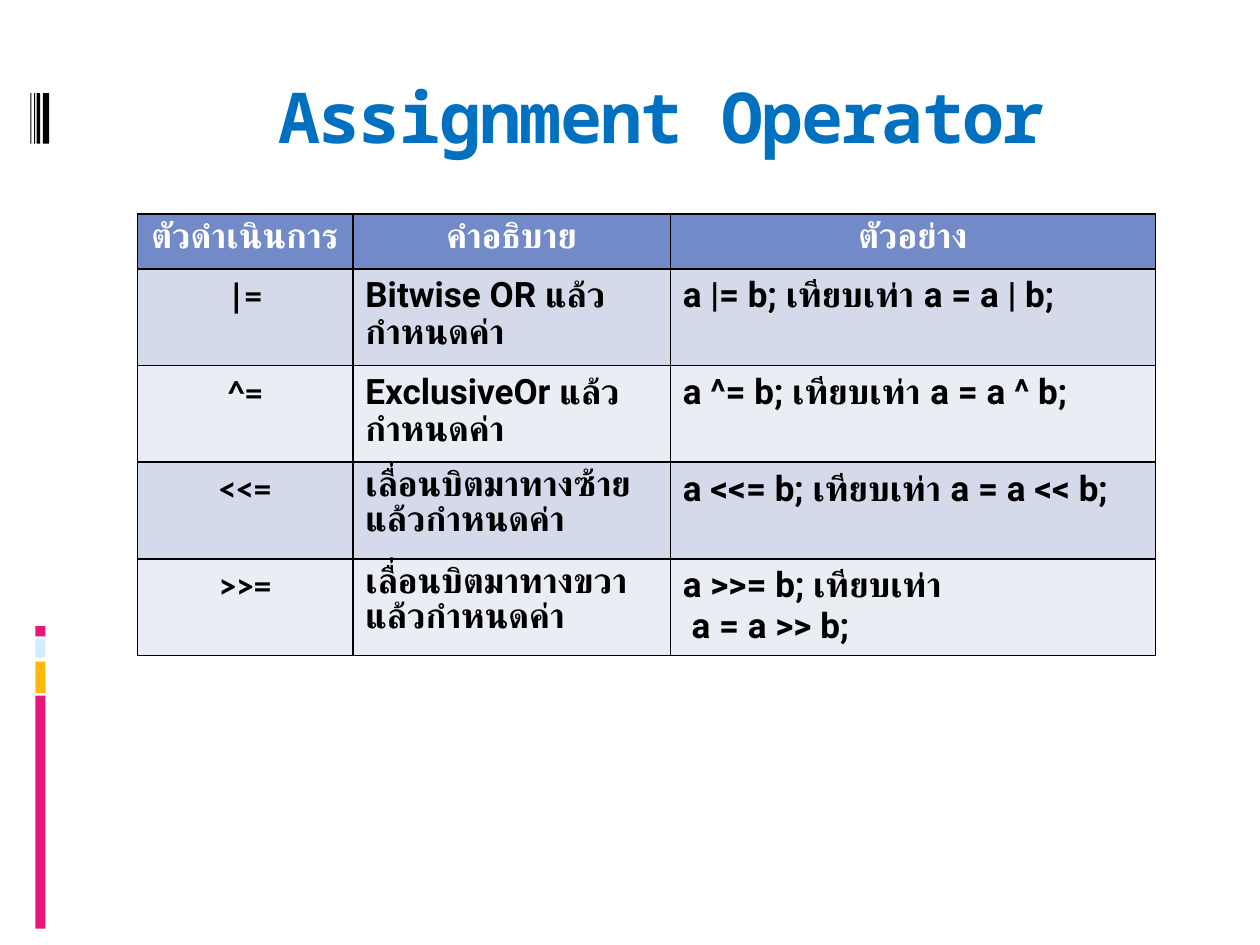
from dataclasses import dataclass

import lxml.etree
import pptx
import pptx.dml.color
import pptx.enum.shapes
import pptx.enum.text
import pptx.oxml.ns
import pptx.util

Inches = pptx.util.Inches
Pt = pptx.util.Pt
qn = pptx.oxml.ns.qn
CENTER = pptx.enum.text.PP_ALIGN.CENTER
LEFT = pptx.enum.text.PP_ALIGN.LEFT


@dataclass
class Stripe:
    left: float
    top: float
    width: float
    height: float
    color: str


@dataclass
class Operator:
    symbol: str
    meaning: str
    example: str
    height: float


STRIPES = [
    Stripe(0.28, 5.52, 0.08, 1.85, "EA157A"),
    Stripe(0.28, 5.25, 0.08, 0.25, "FEB80A"),
    Stripe(0.28, 5.07, 0.08, 0.15, "D6ECFF"),
    Stripe(0.28, 4.97, 0.08, 0.08, "EA157A"),
] + [
    Stripe(left, 0.74, width, 0.4, "000000")
    for left, width in [(0.34, 0.05), (0.29, 0.03), (0.27, 0.01), (0.24, 0.01)]
]

HEADINGS = Operator("ตัวดำเนินการ", "คำอธิบาย", "ตัวอย่าง", 0.41)
OPERATORS = [
    Operator("|=", "Bitwise OR แล้วกำหนดค่า", "a |= b; เทียบเท่า a = a | b;", 0.75),
    Operator("^=", "ExclusiveOr แล้วกำหนดค่า", "a ^= b; เทียบเท่า a = a ^ b;", 0.71),
    Operator("<<=", "เลื่อนบิตมาทางซ้ายแล้วกำหนดค่า", "a <<= b; เทียบเท่า a = a << b;", 0.66),
    Operator(">>=", "เลื่อนบิตมาทางขวาแล้วกำหนดค่า", "a >>= b; เทียบเท่า\n a = a >> b;", 0.75),
]
COLUMN_WIDTHS = [1.71, 2.52, 3.85]
BAND_FILLS = ["D5DAEB", "EBEDF5"]


def rgb(color: str) -> pptx.dml.color.RGBColor:
    return pptx.dml.color.RGBColor.from_string(color)


def style(paragraph, size: float, face: str, color: str, align) -> None:
    paragraph.alignment = align
    paragraph.font.size = Pt(size)
    paragraph.font.name = face
    paragraph.font.bold = True
    paragraph.font.color.rgb = rgb(color)


def draw_stripe(slide, stripe: Stripe) -> None:
    bar = slide.shapes.add_shape(
        pptx.enum.shapes.MSO_SHAPE.RECTANGLE,
        Inches(stripe.left), Inches(stripe.top),
        Inches(stripe.width), Inches(stripe.height),
    )
    bar.shadow.inherit = False
    bar.fill.solid()
    bar.fill.fore_color.rgb = rgb(stripe.color)
    bar.line.fill.background()


def draw_title(slide, words: str) -> None:
    title = slide.shapes.add_textbox(Inches(1), Inches(0.56), Inches(8.5), Inches(1))
    frame = title.text_frame
    frame.word_wrap = True
    frame.margin_top = Inches(0.02)
    frame.text = words
    heading = frame.paragraphs[0]
    style(heading, 40, "Noto Sans Mono", "0070C0", CENTER)
    heading._p.pPr.find(qn("a:defRPr")).set("spc", "-100")


def draw_borders(cell) -> None:
    properties = cell._tc.get_or_add_tcPr()
    for position, side in enumerate(["a:lnL", "a:lnR", "a:lnT", "a:lnB"]):
        line = lxml.etree.Element(qn(side), w=str(Pt(1)))
        fill = lxml.etree.SubElement(line, qn("a:solidFill"))
        lxml.etree.SubElement(fill, qn("a:srgbClr"), val="000000")
        properties.insert(position, line)


def fill_cell(cell, words: str, fill: str, face: str, color: str, align) -> None:
    cell.text = words
    for paragraph in cell.text_frame.paragraphs:
        style(paragraph, 20, face, color, align)
    cell.fill.solid()
    cell.fill.fore_color.rgb = rgb(fill)
    draw_borders(cell)


def draw_operators(slide) -> None:
    rows = [HEADINGS] + OPERATORS
    table = slide.shapes.add_table(
        len(rows), len(COLUMN_WIDTHS), Inches(1.09), Inches(1.7),
        Inches(sum(COLUMN_WIDTHS)), Inches(sum(row.height for row in rows)),
    ).table
    for column, width in zip(table.columns, COLUMN_WIDTHS):
        column.width = Inches(width)
    for r, row in enumerate(rows):
        table.rows[r].height = Inches(row.height)
        is_heading = r == 0
        fill = "738AC8" if is_heading else BAND_FILLS[(r - 1) % 2]
        color = "FFFFFF" if is_heading else "000000"
        for c, words in enumerate([row.symbol, row.meaning, row.example]):
            face = "Calibri" if c == 0 and not is_heading else "Roboto"
            align = CENTER if is_heading or c == 0 else LEFT
            fill_cell(table.cell(r, c), words, fill, face, color, align)


def main() -> None:
    deck = pptx.Presentation()
    deck.slide_width = Inches(10)
    deck.slide_height = Inches(7.5)
    slide = deck.slides.add_slide(deck.slide_layouts[6])
    for stripe in STRIPES:
        draw_stripe(slide, stripe)
    draw_title(slide, "Assignment Operator")
    draw_operators(slide)
    deck.save("out.pptx")


if __name__ == "__main__":
    main()
